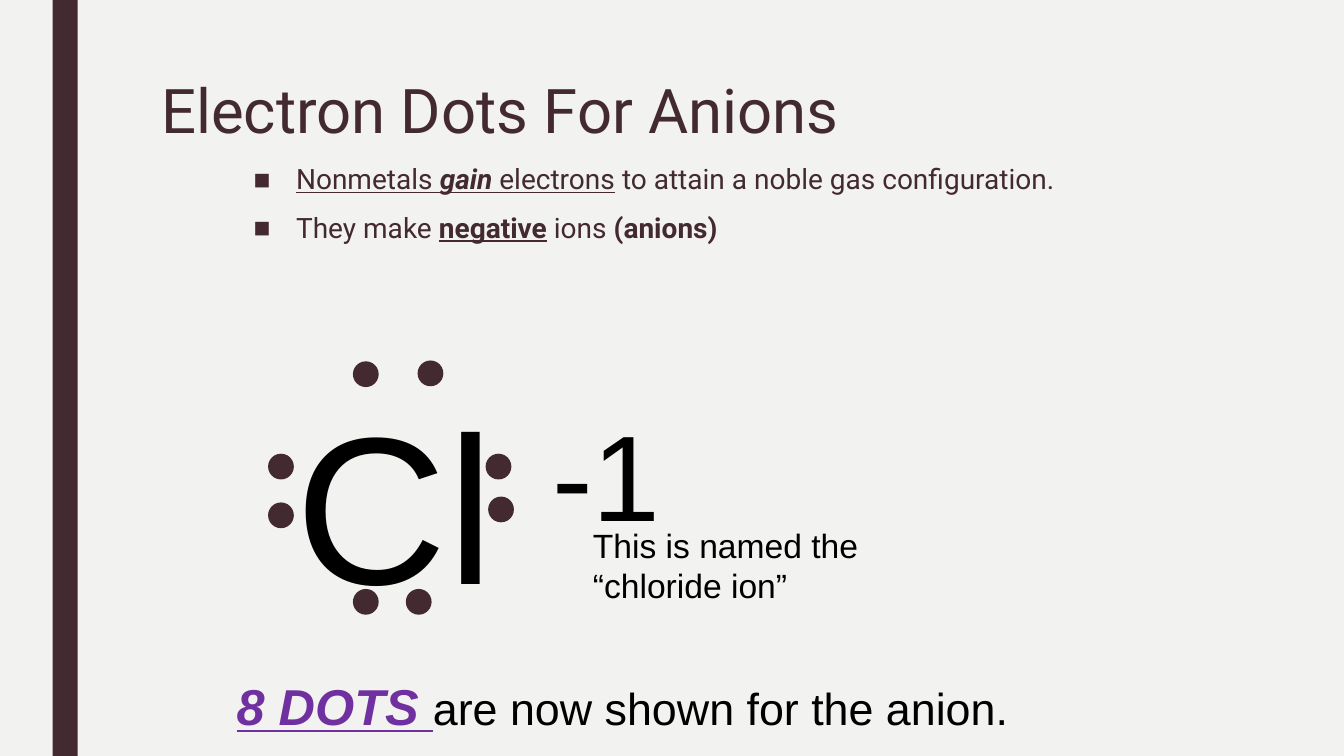
"""Build the slide on electron dots for anions."""
from dataclasses import dataclass

from lxml import etree
from pptx import Presentation
from pptx.dml.color import RGBColor
from pptx.enum.shapes import MSO_SHAPE
from pptx.enum.text import MSO_ANCHOR, MSO_AUTO_SIZE, PP_ALIGN
from pptx.oxml.ns import qn
from pptx.util import Inches, Pt

RECTANGLE, OVAL = MSO_SHAPE.RECTANGLE, MSO_SHAPE.OVAL
TOP, LEFT = MSO_ANCHOR.TOP, PP_ALIGN.LEFT
FIXED, GROW = MSO_AUTO_SIZE.NONE, MSO_AUTO_SIZE.SHAPE_TO_FIT_TEXT


@dataclass(frozen=True)
class Theme:
    paper: RGBColor = RGBColor(0xF2, 0xF2, 0xF0)
    plum: RGBColor = RGBColor(0x43, 0x2A, 0x30)
    black: RGBColor = RGBColor(0, 0, 0)
    purple: RGBColor = RGBColor(0x70, 0x30, 0xA0)
    heading_font: str = "Roboto"
    label_font: str = "Arial"
    title: int = 44
    bullet: int = 20
    symbol: int = 150
    caption: int = 24
    count: int = 36
    remark: int = 32


theme = Theme()
deck = Presentation()
deck.slide_width, deck.slide_height = Inches(13.33), Inches(7.5)
COL, ROW = deck.slide_width / 160, deck.slide_height / 90


def grid(col, row, cols, rows):
    """Turn grid columns and rows into slide lengths."""
    return int(col * COL), int(row * ROW), int(cols * COL), int(rows * ROW)


def write_runs(paragraph, pieces, font, color):
    """Add runs of (text, size, style letters) and return them."""
    runs = []
    for words, size, style in pieces:
        run = paragraph.add_run()
        run.text = words
        run.font.name, run.font.size = font, Pt(size)
        run.font.color.rgb = color
        run.font.bold = "b" in style
        run.font.italic = "i" in style
        run.font.underline = "u" in style
        runs.append(run)
    return runs


slide = deck.slides.add_slide(deck.slide_layouts[1])
slide.background.fill.solid()
slide.background.fill.fore_color.rgb = theme.paper

side_bar = slide.shapes.add_shape(RECTANGLE, *grid(6.25, 0, 3, 90))
side_bar.shadow.inherit = False
side_bar.fill.solid()
side_bar.fill.fore_color.rgb = theme.plum
side_bar.line.fill.background()

heading, facts = slide.shapes.title, slide.placeholders[1]
for holder, place in ((heading, (18, 9, 126, 19.4)), (facts, (29, 19, 103, 24))):
    holder.left, holder.top, holder.width, holder.height = grid(*place)
    holder.text_frame.vertical_anchor = TOP
    holder.text_frame.auto_size = FIXED

title_line = heading.text_frame.paragraphs[0]
title_line.alignment, title_line.line_spacing = LEFT, 0.89
write_runs(title_line, [("Electron Dots For Anions", theme.title, "")],
           theme.heading_font, theme.plum)

FACTS = [
    [("Nonmetals ", "u"), ("gain", "biu"), (" electrons", "u"),
     (" to attain a noble gas configuration.", "")],
    [("They make ", ""), ("negative", "bu"), (" ions ", ""), ("(anions)", "b")],
]
for number, fact in enumerate(FACTS):
    line = facts.text_frame.add_paragraph() if number else facts.text_frame.paragraphs[0]
    line.line_spacing, line.space_before, line.space_after = 0.94, Pt(10), Pt(2)
    write_runs(line, [(words, theme.bullet, style) for words, style in fact],
               theme.heading_font, theme.plum)
    properties = line._p.get_or_add_pPr()
    properties.set("marL", str(Inches(0.42)))
    properties.set("indent", str(-Inches(0.42)))
    etree.SubElement(properties, qn("a:buChar")).set("char", "■")

LABELS = [
    ((34, 44, 56.6, 31.5), [("Cl ", theme.symbol, ""), ("-1", theme.symbol, "")]),
    ((69.4, 61.9, 36.1, 10.9), [("This is named the “chloride ion”", theme.caption, "")]),
    ((27, 79.8, 107, 8.4), [("8 DOTS ", theme.count, "biu"),
                            ("are now shown for the anion.", theme.remark, "")]),
]
label_runs = []
for place, pieces in LABELS:
    label = slide.shapes.add_textbox(*grid(*place))
    label.text_frame.word_wrap = True
    label.text_frame.auto_size = GROW
    line = label.text_frame.paragraphs[0]
    before = etree.SubElement(line._p.get_or_add_pPr(), qn("a:spcBef"))
    etree.SubElement(before, qn("a:spcPct")).set("val", "50000")
    label_runs.append(write_runs(line, pieces, theme.label_font, theme.black))

charge = label_runs[0][1]
charge.font._element.set("baseline", "30000")
dot_count = label_runs[2][0]
dot_count.font.color.rgb = theme.purple

ELECTRON_SIZE = 2.9
ELECTRON_PAIRS = {
    "top": [(42.1, 43.1), (49.8, 43)],
    "left": [(32, 54.1), (32, 59.9)],
    "right": [(57.9, 54.1), (58.2, 59.2)],
    "bottom": [(42.1, 70.2), (48.4, 70.2)],
}
for pair in ELECTRON_PAIRS.values():
    for col, row in pair:
        electron = slide.shapes.add_shape(OVAL, *grid(col, row, ELECTRON_SIZE, ELECTRON_SIZE))
        electron.shadow.inherit = False
        electron.fill.solid()
        electron.fill.fore_color.rgb = theme.plum
        electron.line.color.rgb = theme.plum
        electron.line.width = Pt(1)

deck.save("out.pptx")
